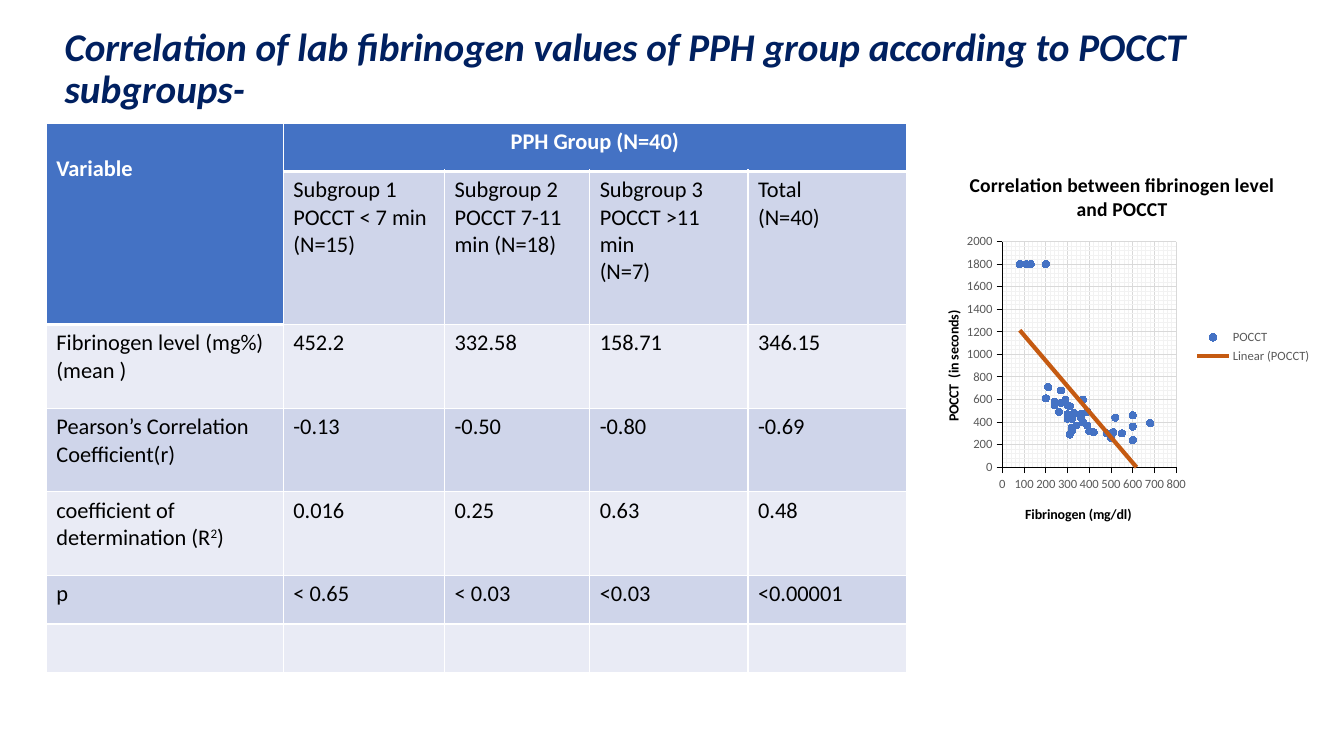
from dataclasses import dataclass

from lxml import etree
from pptx import Presentation
from pptx.chart.data import XyChartData
from pptx.dml.color import RGBColor
from pptx.enum.chart import XL_CHART_TYPE, XL_LEGEND_POSITION, XL_MARKER_STYLE, XL_TICK_MARK
from pptx.enum.text import MSO_ANCHOR, MSO_AUTO_SIZE, PP_ALIGN
from pptx.oxml import parse_xml
from pptx.oxml.ns import nsdecls, qn
from pptx.util import Inches, Pt

LEFT, CENTER = PP_ALIGN.LEFT, PP_ALIGN.CENTER
MIDDLE = MSO_ANCHOR.MIDDLE
NO_AUTOFIT = MSO_AUTO_SIZE.NONE
SCATTER = XL_CHART_TYPE.XY_SCATTER
LEGEND_RIGHT = XL_LEGEND_POSITION.RIGHT
CIRCLE = XL_MARKER_STYLE.CIRCLE
TICK_OUT, TICK_NONE = XL_TICK_MARK.OUTSIDE, XL_TICK_MARK.NONE

FONT = "Calibri"
COLORS = {
    "navy": "002060", "white": "FFFFFF", "black": "000000", "blue": "4472C4",
    "band": "CFD5EA", "pale": "E9EBF5", "grey": "595959", "grid": "D9D9D9",
    "fine_grid": "F2F2F2", "trend": "C55A11",
}
WIDTH, HEIGHT = Inches(13.33), Inches(7.5)
COLUMN, ROW = WIDTH / 100, HEIGHT / 100


@dataclass(frozen=True)
class Box:
    left: float
    top: float
    width: float
    height: float

    def emu(self) -> tuple[int, int, int, int]:
        return (round(self.left * COLUMN), round(self.top * ROW),
                round(self.width * COLUMN), round(self.height * ROW))


@dataclass(frozen=True)
class TableRow:
    height: float
    fill: str
    cells: tuple[str, ...]


@dataclass(frozen=True)
class AxisStyle:
    title: str
    maximum: int
    step: int
    title_at: tuple[float, float]
    rotation: int


TITLE_BOX = Box(4.05, 5.33, 94.22, 7.87)
TABLE_BOX = Box(3.45, 16.27, 63.99, 72.4)
CHART_BOX = Box(68.27, 20.13, 30.08, 51.47)
COLUMN_WIDTHS = (17.63, 12, 10.8, 11.78, 11.78)
TABLE_ROWS = (
    TableRow(6.4, "blue", ("Variable", "PPH Group (N=40)", "", "", "")),
    TableRow(20.27, "band", ("", "Subgroup 1\nPOCCT < 7 min\n(N=15)",
                             "Subgroup 2\nPOCCT 7-11 min (N=18)",
                             "Subgroup 3\nPOCCT >11 min\n(N=7)", "Total\n(N=40)")),
    TableRow(11.07, "pale", ("Fibrinogen level (mg%)\n(mean )",
                             "452.2", "332.58", "158.71", "346.15")),
    TableRow(11.07, "band", ("Pearson’s Correlation\nCoefficient(r)",
                             "-0.13", "-0.50", "-0.80", "-0.69")),
    TableRow(11.07, "pale", ("coefficient of\ndetermination (R^2^)",
                             "0.016", "0.25", "0.63", "0.48")),
    TableRow(6.4, "band", ("p", "< 0.65", "< 0.03", "<0.03", "<0.00001")),
    TableRow(6.4, "pale", ("",) * 5),
)
FIBRINOGEN = (300, 310, 200, 320, 480, 110, 300, 240, 130, 400,
              510, 320, 260, 420, 360, 500, 270, 370, 270, 600,
              110, 360, 200, 370, 210, 600, 600, 330, 520, 680,
              390, 80, 290, 550, 240, 320, 390, 300, 340, 310)
POCCT = (430, 290, 610, 350, 300, 1800, 550, 580, 1800, 320,
         310, 320, 490, 310, 440, 260, 570, 400, 680, 240,
         1800, 470, 1800, 600, 710, 460, 360, 480, 440, 390,
         370, 1800, 600, 300, 550, 430, 490, 470, 370, 540)
FIBRINOGEN_AXIS = AxisStyle("Fibrinogen (mg/dl)", 800, 100, (0.26, 0.9), 0)
POCCT_AXIS = AxisStyle("POCCT  (in seconds)", 2000, 200, (0.06, 0.4), -5400000)


def rgb(name: str) -> RGBColor:
    return RGBColor.from_string(COLORS[name])


def style_font(font, size: float, color: str, bold: bool = False, italic: bool = False) -> None:
    font.name, font.size, font.bold, font.italic = FONT, Pt(size), bold, italic
    font.color.rgb = rgb(color)


def write_text(frame, text: str, *, size: float = 16, color: str = "black", bold: bool = False,
               italic: bool = False, align=None, spacing: float | None = None) -> None:
    for number, line in enumerate(text.split("\n")):
        paragraph = frame.add_paragraph() if number else frame.paragraphs[0]
        paragraph.alignment, paragraph.line_spacing = align, spacing
        for position, part in enumerate(line.split("^")):
            run = paragraph.add_run()
            run.text = part
            style_font(run.font, size, color, bold, italic)
            if position % 2:
                run.font._element.set("baseline", "30000")


def line_xml(tag: str, color: str, points: float) -> str:
    return (f'<a:{tag} {nsdecls("a")} w="{Pt(points)}"><a:solidFill>'
            f'<a:srgbClr val="{COLORS[color]}"/></a:solidFill></a:{tag}>')


def set_borders(cell, bottom: float) -> None:
    properties = cell._tc.get_or_add_tcPr()
    for index, (side, points) in enumerate(zip("LRTB", (1, 1, 1, bottom))):
        properties.insert(index, parse_xml(line_xml(f"ln{side}", "white", points)))


def add_results_table(slide) -> None:
    results = slide.shapes.add_table(len(TABLE_ROWS), len(COLUMN_WIDTHS), *TABLE_BOX.emu()).table
    for column, width in zip(results.columns, COLUMN_WIDTHS):
        column.width = round(width * COLUMN)
    results.cell(0, 0).merge(results.cell(1, 0))
    results.cell(0, 1).merge(results.cell(0, 4))
    for r, row in enumerate(TABLE_ROWS):
        results.rows[r].height = round(row.height * ROW)
        for c, text in enumerate(row.cells):
            cell = results.cell(r, c)
            header = r == 0 or (r == 1 and c == 0)
            cell.fill.solid()
            cell.fill.fore_color.rgb = rgb("blue" if header else row.fill)
            set_borders(cell, 3 if header else 1)
            if text:
                write_text(cell.text_frame, text, bold=header,
                           color="white" if header else "black",
                           align=CENTER if header and c else LEFT)
    results.cell(0, 0).margin_top = Inches(0.32)


def place(element, index: int, **shares: float) -> None:
    for old in element.findall(qn("c:layout")):
        element.remove(old)
    layout = parse_xml(f'<c:layout {nsdecls("c")}><c:manualLayout/></c:layout>')
    target = "inner" if "w" in shares else None
    settings = {"layoutTarget": target, "xMode": "edge", "yMode": "edge", **shares}
    for tag, value in settings.items():
        if value is not None:
            etree.SubElement(layout[0], qn(f"c:{tag}")).set("val", str(value))
    element.insert(index, layout)


def style_line(line, color: str, points: float) -> None:
    line.color.rgb, line.width = rgb(color), Pt(points)


def style_axis(axis, style: AxisStyle) -> None:
    axis.minimum_scale, axis.maximum_scale, axis.major_unit = 0, style.maximum, style.step
    axis.major_tick_mark, axis.minor_tick_mark = TICK_OUT, TICK_NONE
    axis.has_major_gridlines = axis.has_minor_gridlines = True
    style_line(axis.major_gridlines.format.line, "grid", 0.75)
    axis._element.find(qn("c:minorGridlines")).append(parse_xml(
        f'<c:spPr {nsdecls("c")}>{line_xml("ln", "fine_grid", 0.75)}</c:spPr>'))
    style_line(axis.format.line, "black", 0.75)
    style_font(axis.tick_labels.font, 9, "grey")
    heading = axis.axis_title
    write_text(heading.text_frame, style.title, size=10, bold=True)
    heading.text_frame._txBody.bodyPr.set("rot", str(style.rotation))
    place(heading._element, 1, x=style.title_at[0], y=style.title_at[1])


def add_correlation_chart(slide) -> None:
    measurements = XyChartData()
    points = measurements.add_series("POCCT")
    for level, seconds in zip(FIBRINOGEN, POCCT):
        points.add_data_point(level, seconds)
    chart = slide.shapes.add_chart(SCATTER, *CHART_BOX.emu(), measurements).chart
    style_font(chart.font, 10, "black")
    chart.has_title = True
    write_text(chart.chart_title.text_frame, "Correlation between fibrinogen level and POCCT",
               size=14, bold=True, align=CENTER)
    place(chart.chart_title._element, 1, x=0.12, y=0.04)
    place(chart._chartSpace.chart.plotArea, 0, x=0.21, y=0.23, w=0.43, h=0.58)
    style_axis(chart.category_axis, FIBRINOGEN_AXIS)
    style_axis(chart.value_axis, POCCT_AXIS)
    chart.has_legend = True
    chart.legend.position, chart.legend.include_in_layout = LEGEND_RIGHT, False
    style_font(chart.legend.font, 9, "grey")
    chart.plots[0].vary_by_categories = False
    series = chart.plots[0].series[0]
    series.format.line.fill.background()
    series.marker.style, series.marker.size = CIRCLE, 5
    series.marker.format.fill.solid()
    series.marker.format.fill.fore_color.rgb = rgb("blue")
    style_line(series.marker.format.line, "blue", 0.75)
    series._element.find(qn("c:xVal")).addprevious(parse_xml(
        f'<c:trendline {nsdecls("c")}><c:spPr>{line_xml("ln", "trend", 3)}</c:spPr>'
        '<c:trendlineType val="linear"/><c:dispRSqr val="0"/><c:dispEq val="0"/></c:trendline>'))


def main() -> None:
    deck = Presentation()
    deck.slide_width, deck.slide_height = WIDTH, HEIGHT
    slide = deck.slides.add_slide(deck.slide_layouts[5])
    heading = slide.shapes.title
    heading.left, heading.top, heading.width, heading.height = TITLE_BOX.emu()
    heading.text_frame.auto_size = NO_AUTOFIT
    heading.text_frame.vertical_anchor = MIDDLE
    write_text(heading.text_frame,
               "Correlation of lab fibrinogen values of PPH group according to POCCT subgroups-",
               size=28, color="navy", bold=True, italic=True, align=LEFT, spacing=0.9)
    add_results_table(slide)
    add_correlation_chart(slide)
    deck.save("out.pptx")


if __name__ == "__main__":
    main()
